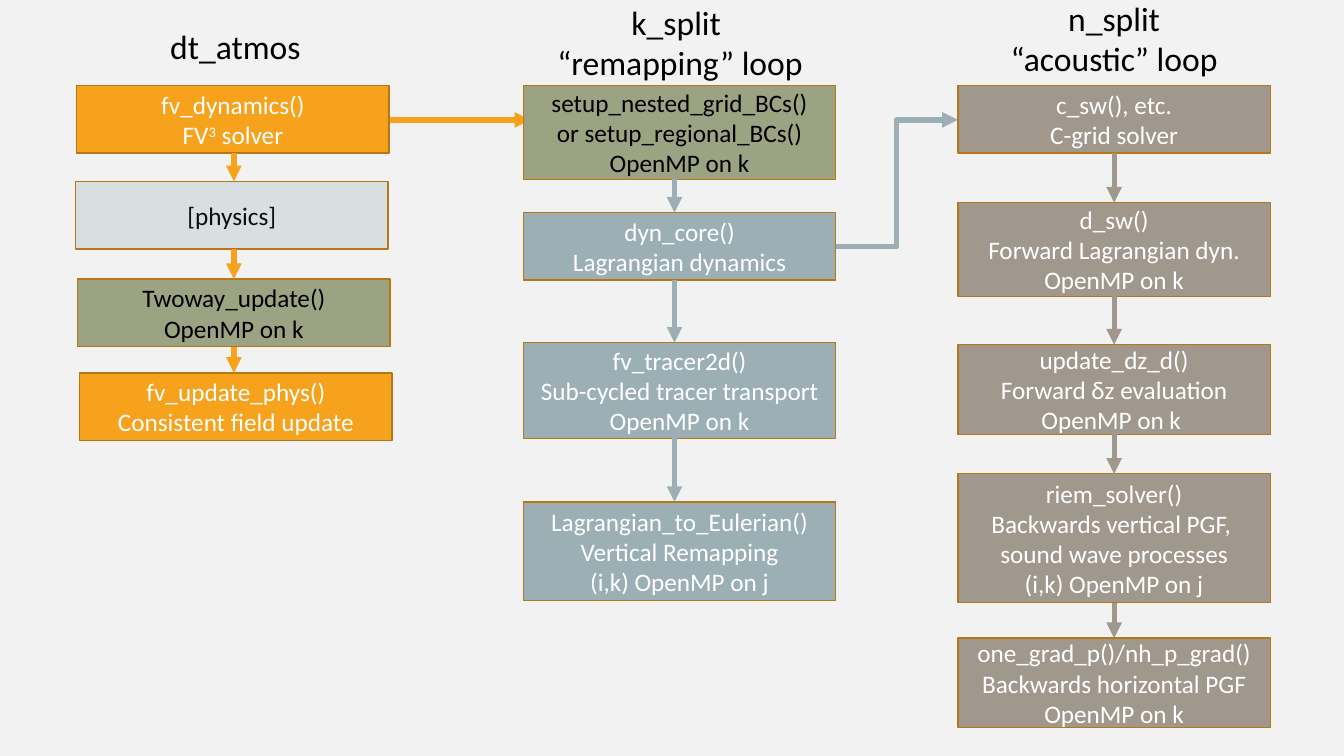
from lxml import etree
from pptx import Presentation, util as u
from pptx.dml.color import RGBColor
from pptx.enum import shapes, text
from pptx.oxml.ns import qn

ORANGE, GREEN, BLUE, TAUPE, PALE = "F6A21D", "9CA383", "9BAFB5", "A0988C", "D7DFE1"
WHITE, BLACK, NEAR_BLACK, BORDER = "FFFFFF", "000000", "0D0D0D", "B67815"
BOX_WIDTH = 3.1

COLUMNS = [
    {
        "title": ("dt_atmos", (1.5, 0.21, 1.67, 0.5)),
        "arrows": (2.32, ORANGE),
        "steps": [
            (0.76, 0.85, 0.67, ORANGE, WHITE, "fv_dynamics()\nFV^3^ solver"),
            (0.75, 1.8, 0.67, PALE, NEAR_BLACK, "[physics]"),
            (0.77, 2.77, 0.67, GREEN, BLACK, "Twoway_update()\nOpenMP on k"),
            (0.79, 3.7, 0.67, ORANGE, WHITE, "fv_update_phys()\nConsistent field update"),
        ],
    },
    {
        "title": ("k_split \n“remapping” loop", (5.26, -0.03, 2.97, 0.91)),
        "arrows": (6.69, BLUE),
        "steps": [
            (5.19, 0.85, 0.93, GREEN, BLACK,
             "setup_nested_grid_BCs()\nor setup_regional_BCs()\nOpenMP on k"),
            (5.19, 2.11, 0.67, BLUE, WHITE, "dyn_core()\nLagrangian dynamics"),
            (5.19, 3.4, 0.95, BLUE, WHITE,
             "fv_tracer2d()\nSub-cycled tracer transport\nOpenMP on k"),
            (5.19, 4.98, 0.98, BLUE, WHITE,
             "Lagrangian_to_Eulerian()\nVertical Remapping\n(i,k) OpenMP on j"),
        ],
    },
    {
        "title": ("n_split “acoustic” loop", (9.8, -0.07, 2.5, 0.91)),
        "arrows": (11.05, TAUPE),
        "steps": [
            (9.5, 0.85, 0.67, TAUPE, WHITE, "c_sw(), etc.\nC-grid solver"),
            (9.5, 2.01, 0.93, TAUPE, WHITE, "d_sw()\nForward Lagrangian dyn.\nOpenMP on k"),
            (9.5, 3.42, 0.89, TAUPE, WHITE,
             "update_dz_d()\nForward δz evaluation\nOpenMP on k "),
            (9.5, 4.7, 1.28, TAUPE, WHITE,
             "riem_solver()\nBackwards vertical PGF, \vsound wave processes\n(i,k) OpenMP on j"),
            (9.5, 6.33, 0.89, TAUPE, WHITE,
             "one_grad_p()/nh_p_grad()\nBackwards horizontal PGF\nOpenMP on k"),
        ],
    },
]


def set_color(color_format, value):
    color_format.rgb = RGBColor.from_string(value)


def set_fill(fill, value):
    fill.solid()
    set_color(fill.fore_color, value)


def write(frame, content, size=18, color=BLACK, anchor=text.MSO_ANCHOR.MIDDLE):
    frame.word_wrap = True
    frame.vertical_anchor = anchor
    for index, line in enumerate(content.split("\n")):
        paragraph = frame.paragraphs[0] if index == 0 else frame.add_paragraph()
        paragraph.alignment = text.PP_ALIGN.CENTER
        for row, part in enumerate(line.split("\v")):
            if row:
                paragraph.add_line_break()
            for position, piece in enumerate(part.split("^")):
                run = paragraph.add_run()
                run.text = piece
                run.font.size = u.Pt(size)
                run.font.name = "Calibri"
                set_color(run.font.color, color)
                if position % 2:
                    run.font._element.set("baseline", "30000")


def add_arrow(slide, start, end, color, kind=shapes.MSO_CONNECTOR.STRAIGHT):
    arrow = slide.shapes.add_connector(kind, *map(u.Inches, (*start, *end)))
    arrow.line.width = u.Pt(3.75)
    set_fill(arrow.line.fill, color)
    etree.SubElement(arrow.line._get_or_add_ln(), qn("a:tailEnd"), type="triangle")
    etree.SubElement(arrow._element.spPr, qn("a:effectLst"))


def add_step(slide, left, top, height, fill, color, content):
    box = slide.shapes.add_shape(
        shapes.MSO_SHAPE.RECTANGLE, *map(u.Inches, (left, top, BOX_WIDTH, height)))
    box.shadow.inherit = False
    set_fill(box.fill, fill)
    set_fill(box.line.fill, BORDER)
    box.line.width = u.Pt(1)
    write(box.text_frame, content, color=color)


def add_column(slide, title, arrows, steps):
    heading, box = title
    frame = slide.shapes.add_textbox(*map(u.Inches, box)).text_frame
    write(frame, heading, size=24, anchor=text.MSO_ANCHOR.TOP)
    frame.auto_size = text.MSO_AUTO_SIZE.SHAPE_TO_FIT_TEXT
    for step in steps:
        add_step(slide, *step)
    center, color = arrows
    for upper, lower in zip(steps, steps[1:]):
        add_arrow(slide, (center, upper[1] + upper[2]), (center, lower[1]), color)


def add_loop_links(slide):
    elbow = shapes.MSO_CONNECTOR.ELBOW
    add_arrow(slide, (3.85, 1.19), (5.26, 1.19), ORANGE, elbow)
    add_arrow(slide, (8.28, 2.45), (9.5, 1.19), BLUE, elbow)


def main():
    presentation = Presentation()
    presentation.slide_width = u.Inches(13.33)
    presentation.slide_height = u.Inches(7.5)
    slide = presentation.slides.add_slide(presentation.slide_layouts[6])
    set_fill(slide.background.fill, "F2F2F2")
    add_loop_links(slide)
    for column in COLUMNS:
        add_column(slide, **column)
    presentation.save("out.pptx")


if __name__ == "__main__":
    main()
